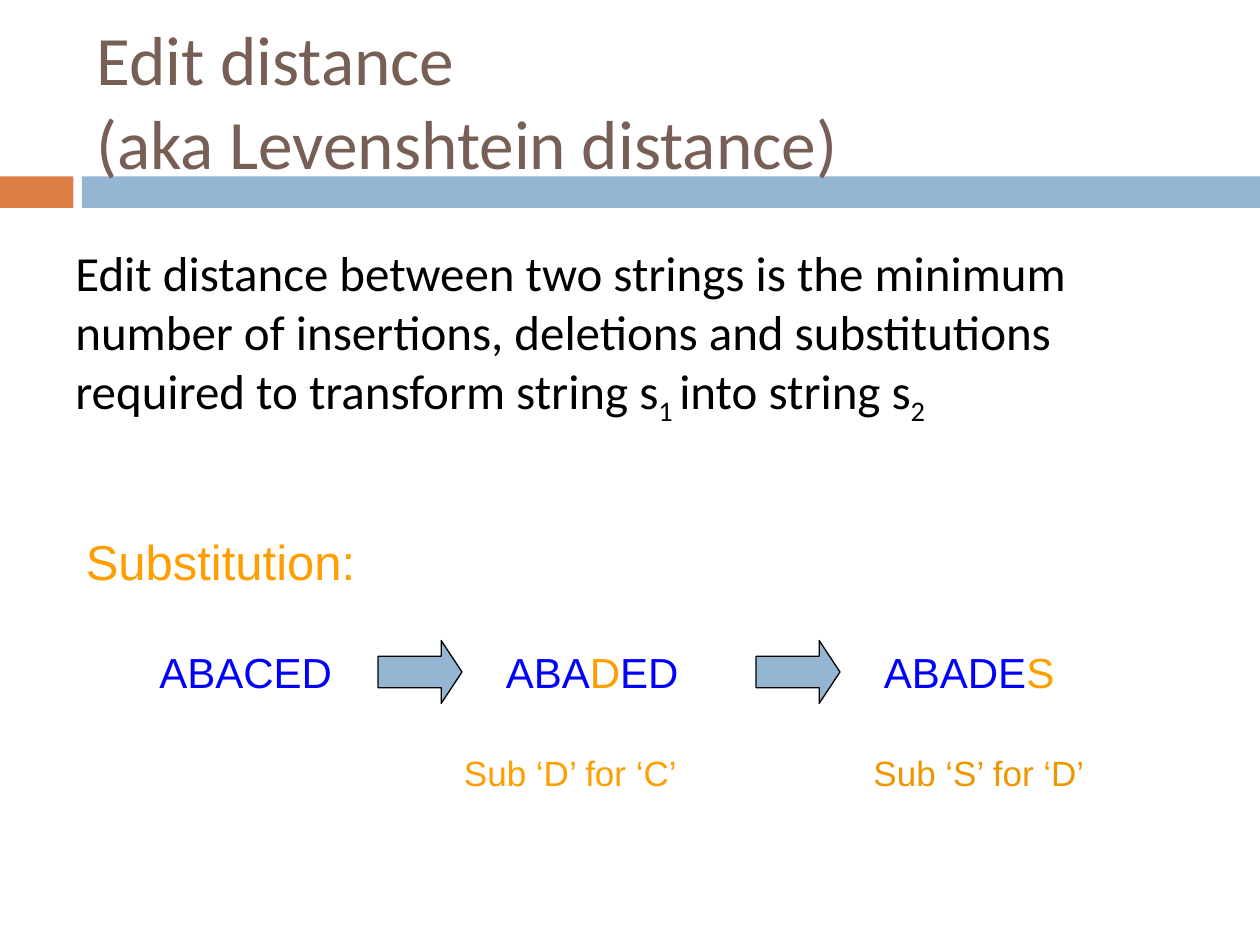
from dataclasses import dataclass

from pptx import Presentation
from pptx.dml.color import RGBColor
from pptx.enum.shapes import MSO_SHAPE
from pptx.enum.text import MSO_ANCHOR
from pptx.util import Inches, Pt

RECT, ARROW = MSO_SHAPE.RECTANGLE, MSO_SHAPE.RIGHT_ARROW
TOP, MIDDLE = MSO_ANCHOR.TOP, MSO_ANCHOR.MIDDLE
CELL = 1 / 12  # grid step in inches: 120 columns by 90 rows


@dataclass(frozen=True)
class Theme:
    brown: str = "775F55"
    rust: str = "DD8047"
    sky: str = "94B6D2"
    blue: str = "0000FF"
    gold: str = "FF9E00"
    amber: str = "EF9600"
    black: str = "000000"
    serif: str = "Calibri"
    sans: str = "Arial"
    title: float = 39.6
    body: float = 28
    word: float = 24
    note: float = 20


LOOK = Theme()


def rgb(code):
    return RGBColor.from_string(code)


def place(box):
    return [Inches(n * CELL) for n in box]


def add_text(slide, box, parts, font, size, anchor=TOP):
    """Write one paragraph from (text, colour, baseline in percent) parts."""
    frame = slide.shapes.add_textbox(*place(box)).text_frame
    frame.word_wrap = True
    frame.vertical_anchor = anchor
    para = frame.paragraphs[0]
    para.text = "".join(text for text, _, _ in parts[:1])
    for text, _, _ in parts[1:]:
        para.add_run().text = text
    for run, (_, color, shift) in zip(para.runs, parts):
        run.font.name, run.font.size = font, Pt(size)
        run.font.color.rgb = rgb(color)
        if shift:
            run.font._element.set("baseline", str(shift * 1000))


def add_solid(slide, kind, box, fill, line=None):
    shape = slide.shapes.add_shape(kind, *place(box))
    shape.shadow.inherit = False
    shape.fill.solid()
    shape.fill.fore_color.rgb = rgb(fill)
    if line:
        shape.line.color.rgb = rgb(line)
        shape.line.width = Pt(0.75)
    else:
        shape.line.fill.background()
    return shape


def add_head(slide, box):
    x, y, w, h = box
    bar, tab, start = y + 16.8, 7, 7.8
    add_solid(slide, RECT, (x, bar, tab, 3), LOOK.rust)
    add_solid(slide, RECT, (x + start, bar, w - start, 3), LOOK.sky)
    lines = ["Edit distance ", "(aka Levenshtein distance)"]
    frame = slide.shapes.add_textbox(*place((x + 8, y + 3, 107, 13))).text_frame
    frame.word_wrap = True
    frame.vertical_anchor = MIDDLE
    frame.text = "\v".join(lines)
    for run in frame.paragraphs[0].runs:
        run.font.name, run.font.size = LOOK.serif, Pt(LOOK.title)
        run.font.color.rgb = rgb(LOOK.brown)


def add_body(slide, box):
    lead = ("Edit distance between two strings is the minimum number of "
            "insertions, deletions and substitutions required to transform string s")
    parts = [(lead, 0), ("1 ", -25), ("into string s", 0), ("2", -25)]
    add_text(slide, box, [(text, LOOK.black, shift) for text, shift in parts],
             LOOK.serif, LOOK.body)


def add_steps(slide, box):
    """Show the label, the chain of words and the note under each change."""
    x, y, _, _ = box
    blue, gold = LOOK.blue, LOOK.gold
    add_text(slide, (x, y, 30, 7), [("Substitution:", gold, 0)],
             LOOK.sans, LOOK.body)
    words = [
        (7, 19, [("ABACED", blue, 0)]),
        (40, 23, [("ABA", blue, 0), ("D", gold, 0), ("ED", blue, 0)]),
        (76, 27, [("ABADE", blue, 0), ("S", gold, 0)]),
    ]
    for col, wide, parts in words:
        add_text(slide, (x + col, y + 11, wide, 6), parts, LOOK.sans, LOOK.word)
    for step in range(2):
        arrow = add_solid(slide, ARROW, (x + 29 + 36 * step, y + 11, 8, 6),
                          LOOK.sky, LOOK.black)
        arrow.adjustments[0], arrow.adjustments[1] = 0.5, 0.33
    notes = [(36, 27, "Sub ‘D’ for ‘C’", gold),
             (75, 33, "Sub ‘S’ for ‘D’", LOOK.amber)]
    for col, wide, text, color in notes:
        add_text(slide, (x + col, y + 21, wide, 5), [(text, color, 0)],
                 LOOK.sans, LOOK.note)


def main():
    deck = Presentation()
    deck.slide_width, deck.slide_height = Inches(10), Inches(7.5)
    slide = deck.slides.add_slide(deck.slide_layouts[6])
    add_head(slide, (0, 0, 120, 20))
    add_steps(slide, (7, 50, 108, 26))
    add_body(slide, (6, 22.5, 108, 27.5))
    deck.save("out.pptx")


if __name__ == "__main__":
    main()
